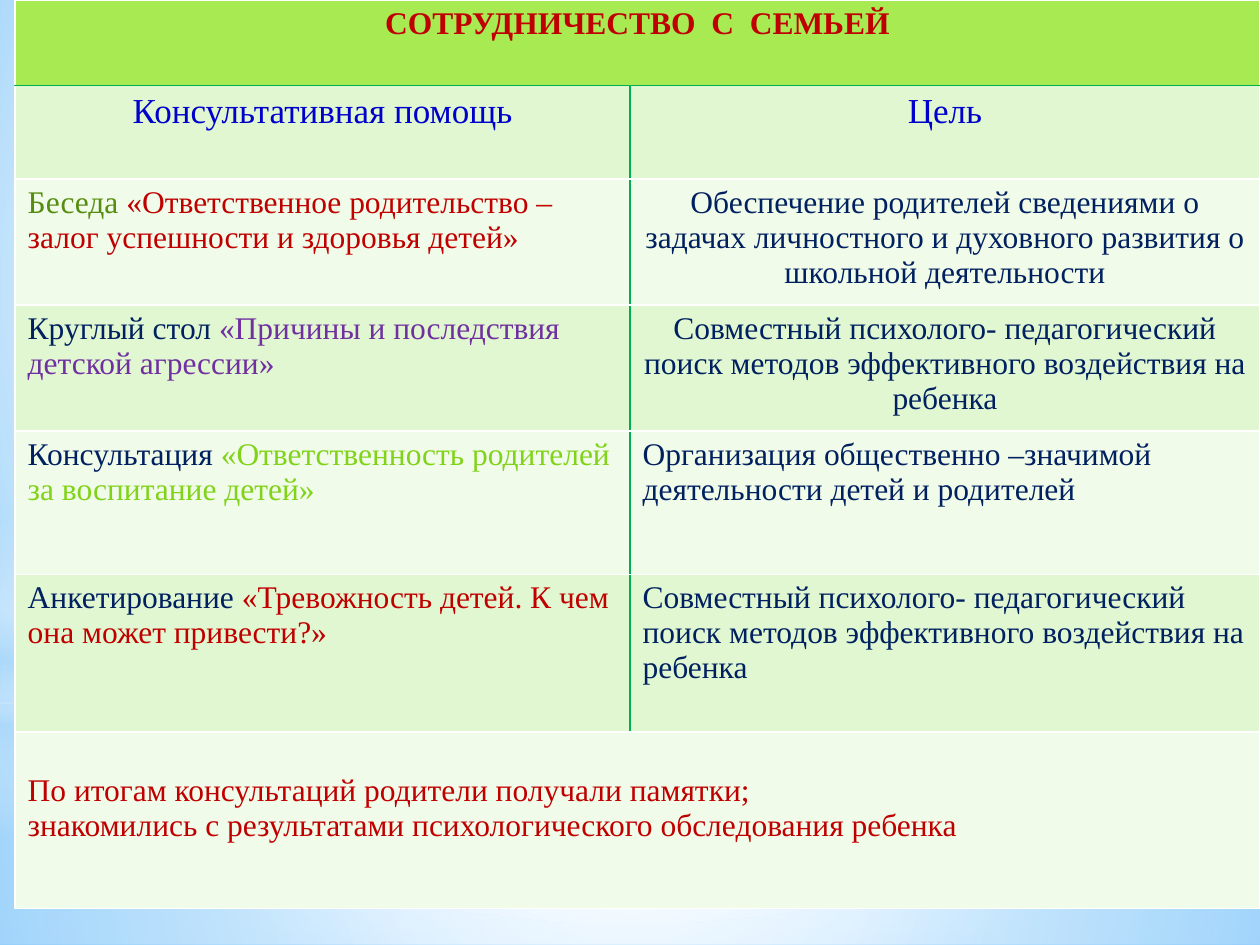
from dataclasses import dataclass

from lxml.etree import SubElement as Sub
from pptx import Presentation
from pptx.dml.color import RGBColor as RGB
from pptx.enum.shapes import MSO_SHAPE as SHAPE
from pptx.enum.text import PP_ALIGN as ALIGN
from pptx.oxml.ns import qn
from pptx.util import Emu, Inches, Pt


@dataclass(frozen=True)
class Theme:
    font: str = "Times New Roman"
    text_size: int = 18
    head_size: int = 20
    line: float = 1
    banner: str = "A7EA52"
    bands: tuple = ("F1FBE9", "E1F7D1")
    white: str = "FFFFFF"
    sky: str = "B4DCFA"
    sky_light: str = "9ED5FF"
    sky_deep: str = "5BB9FF"
    green: str = "00B050"
    red: str = "C00000"
    blue: str = "0000CC"
    navy: str = "002060"
    olive: str = "568D11"
    violet: str = "7030A0"
    lime: str = "81D31A"


T = Theme()
COLS = (4.88, 5)
ROWS = (0.68, 0.74, 1, 1, 1.14, 1.25, 1.4)
CENTRE = (50, 50, 50, 50)
JOINT = "Совместный психолого- педагогический поиск методов эффективного воздействия на ребенка"
TOPICS = (
    (("Беседа", T.olive), (" «Ответственное родительство –залог успешности и здоровья детей»", T.red),
     "Обеспечение родителей сведениями о задачах личностного и духовного развития о школьной деятельности",
     ALIGN.CENTER),
    (("Круглый стол ", T.navy), ("«Причины и последствия детской агрессии»", T.violet),
     JOINT, ALIGN.CENTER),
    (("Консультация", T.navy), (" «Ответственность родителей за воспитание детей»", T.lime),
     "Организация общественно –значимой деятельности детей и родителей", ALIGN.LEFT),
    (("Анкетирование ", T.navy), ("«Тревожность детей. К чем она может привести?»", T.red),
     JOINT, ALIGN.LEFT),
)
SUMMARY = (
    "По итогам консультаций родители получали памятки;",
    "знакомились с результатами психологического обследования ребенка",
)


def set_gradient(fill, owner, stops, focus=None):
    fill.gradient()
    grad = owner.find(".//" + qn("a:gradFill"))
    grad.clear()
    grad.set("rotWithShape", "1")
    stop_list = Sub(grad, qn("a:gsLst"))
    for pos, color, alpha in stops:
        gs = Sub(stop_list, qn("a:gs"), pos=str(pos * 1000))
        clr = Sub(gs, qn("a:srgbClr"), val=color)
        if alpha < 100:
            Sub(clr, qn("a:alpha"), val=str(alpha * 1000))
    if focus:
        circle = Sub(grad, qn("a:path"), path="circle")
        sides = {side: str(v * 1000) for side, v in zip("ltrb", focus)}
        Sub(circle, qn("a:fillToRect"), **sides)
    else:
        Sub(grad, qn("a:lin"), ang="5400000", scaled="0")


def add_haze(prs, s, kind, top, height, stops, focus=None):
    h = prs.slide_height
    sp = s.shapes.add_shape(kind, 0, Emu(int(top * h)), prs.slide_width, Emu(int(height * h)))
    sp.shadow.inherit = False
    sp.line.fill.background()
    set_gradient(sp.fill, sp.element, stops, focus)


def add_sky(prs, s):
    set_gradient(s.background.fill, s.element,
                 ((0, T.sky_light, 100), (60, T.white, 100), (100, T.sky_deep, 100)),
                 (20, 10, 20, 60))
    add_haze(prs, s, SHAPE.RECTANGLE, 0.744, 0.256,
             ((0, T.white, 91), (37, T.white, 76), (100, T.sky, 79)), CENTRE)
    add_haze(prs, s, SHAPE.RECTANGLE, 0, 0.744,
             ((0, T.white, 89), (48, T.white, 62), (100, T.sky, 79)), CENTRE)
    add_haze(prs, s, SHAPE.RECTANGLE, 0.55, 0.333,
             ((0, T.white, 0), (29, T.white, 30), (45, T.sky, 40),
              (55, T.white, 26), (65, T.sky, 60), (100, T.white, 0)))
    add_haze(prs, s, SHAPE.OVAL, 0.233, 0.744,
             ((0, T.white, 100), (56, T.white, 0)), CENTRE)


def set_borders(cell, colors):
    tc_pr = cell._tc.get_or_add_tcPr()
    for side, color in zip("LRTB", colors):
        ln = Sub(tc_pr, qn("a:ln" + side), w=str(Pt(T.line)))
        Sub(Sub(ln, qn("a:solidFill")), qn("a:srgbClr"), val=color)


def style_cells(table):
    last = len(ROWS) - 1
    for r in range(len(ROWS)):
        for c in range(len(COLS)):
            cell = table.cell(r, c)
            split = 0 < r < last
            left = T.green if split and c == 1 else T.white
            right = T.green if split and c == 0 else T.white
            top = T.green if r == 1 else T.white
            bottom = T.green if r == 0 else T.white
            set_borders(cell, (left, right, top, bottom))
            cell.fill.solid()
            cell.fill.fore_color.rgb = RGB.from_string(T.bands[r % 2] if r else T.banner)


def write(p, runs, align=ALIGN.LEFT, size=T.text_size, bold=False):
    p.alignment = align
    for text, color in runs:
        r = p.add_run()
        r.text = text
        r.font.name = T.font
        r.font.size = Pt(size)
        r.font.bold = bold
        r.font.color.rgb = RGB.from_string(color)


def write_cell(cell, runs, **style):
    write(cell.text_frame.paragraphs[0], runs, **style)


def add_plan(prs, s):
    width = sum(COLS)
    frame = s.shapes.add_table(len(ROWS), len(COLS), prs.slide_width - Inches(width), 0,
                               Inches(width), Inches(sum(ROWS)))
    table = frame.table
    table.first_row = table.horz_banding = False
    for col, w in zip(table.columns, COLS):
        col.width = Inches(w)
    for row, h in zip(table.rows, ROWS):
        row.height = Inches(h)
    style_cells(table)

    last = len(ROWS) - 1
    for r in (0, last):
        table.cell(r, 0).merge(table.cell(r, 1))
    write_cell(table.cell(0, 0), [("СОТРУДНИЧЕСТВО  С  СЕМЬЕЙ", T.red)],
               align=ALIGN.CENTER, bold=True)
    for c, head in enumerate(("Консультативная помощь", "Цель")):
        write_cell(table.cell(1, c), [(head, T.blue)], align=ALIGN.CENTER, size=T.head_size)
    for r, (form, topic, goal, align) in enumerate(TOPICS, 2):
        write_cell(table.cell(r, 0), [form, topic])
        write_cell(table.cell(r, 1), [(goal, T.navy)], align=align)

    summary = table.cell(last, 0)
    summary.margin_top = Inches(0.33)
    tf = summary.text_frame
    for i, text in enumerate(SUMMARY):
        write(tf.add_paragraph() if i else tf.paragraphs[0], [(text, T.red)])


def main():
    prs = Presentation()
    prs.slide_width, prs.slide_height = Inches(10), Inches(7.5)
    s = prs.slides.add_slide(prs.slide_layouts[6])
    add_sky(prs, s)
    add_plan(prs, s)
    prs.save("out.pptx")


if __name__ == "__main__":
    main()
